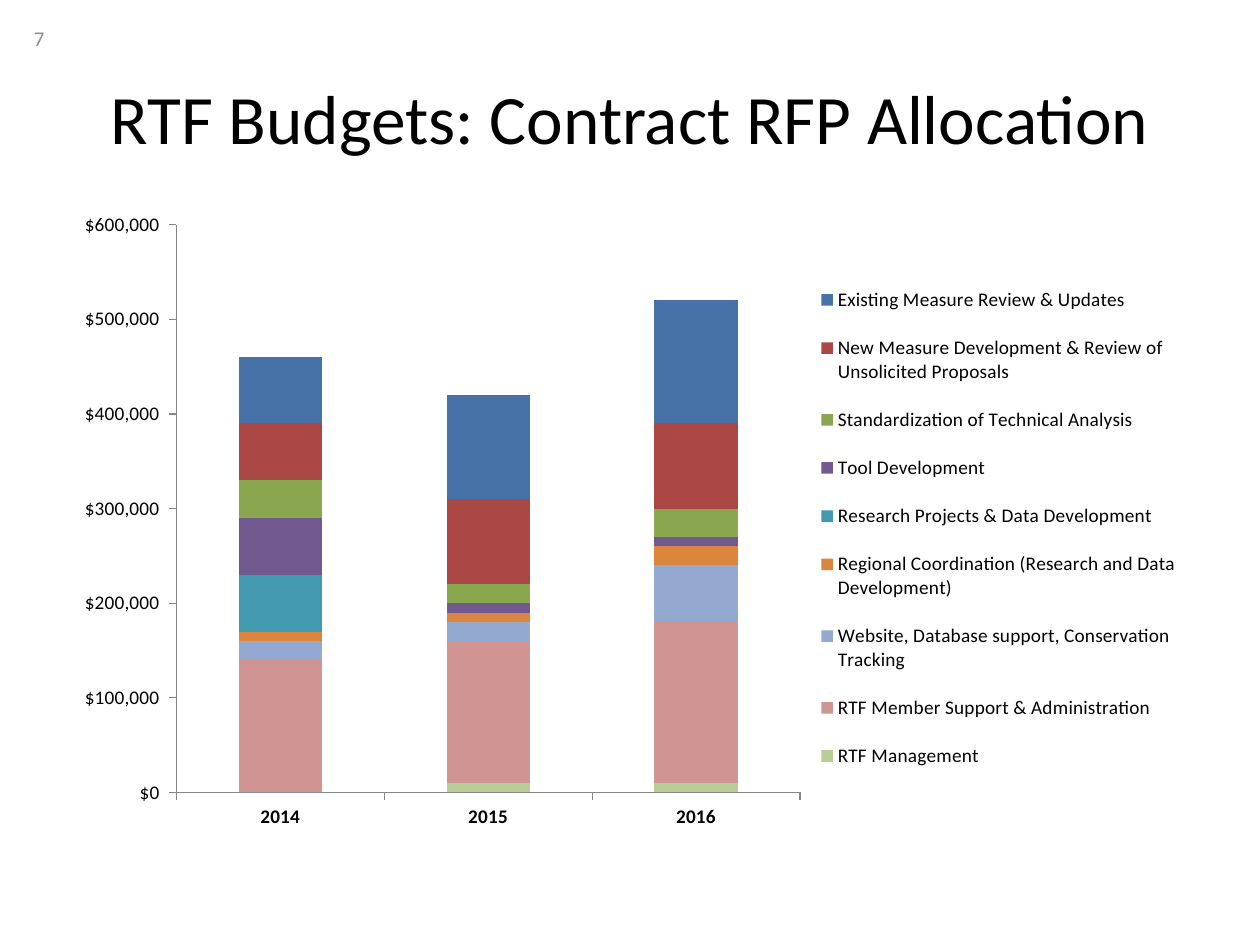
from lxml.etree import SubElement
from pptx import Presentation
from pptx.chart.data import CategoryChartData
from pptx.dml.color import RGBColor
from pptx.enum.chart import XL_CHART_TYPE, XL_LEGEND_POSITION, XL_TICK_MARK
from pptx.enum.text import MSO_ANCHOR, PP_ALIGN
from pptx.oxml.ns import qn
from pptx.util import Inches, Pt

FONT = "Calibri"
YEARS = ["2014", "2015", "2016"]
BUDGETS = [
    ("RTF Management", (0, 10000, 10000), "B9CD97"),
    ("RTF Member Support & Administration", (140000, 150000, 170000), "D09493"),
    ("Website, Database support, Conservation Tracking", (20000, 20000, 60000), "93A9D0"),
    ("Regional Coordination (Research and Data Development)", (10000, 10000, 20000), "DC853E"),
    ("Research Projects & Data Development", (60000, 0, 0), "4299B0"),
    ("Tool Development", (60000, 10000, 10000), "725990"),
    ("Standardization of Technical Analysis", (40000, 20000, 30000), "8AA64F"),
    ("New Measure Development & Review of Unsolicited Proposals", (60000, 90000, 90000), "AB4744"),
    ("Existing Measure Review & Updates", (70000, 110000, 130000), "4672A8"),
]


def color(hex_string):
    """Turn a hex string into a colour."""
    return RGBColor.from_string(hex_string)


def style_font(font, size, hex_string="000000", bold=False):
    """Give a font its face, size, colour and weight."""
    font.name = FONT
    font.size = Pt(size)
    font.bold = bold
    font.color.rgb = color(hex_string)


def add_text(slide, text, box, size, hex_string, alignment):
    """Add one line of text, centred vertically in its box."""
    shape = slide.shapes.add_textbox(*[Inches(length) for length in box])
    frame = shape.text_frame
    frame.word_wrap = True
    frame.vertical_anchor = MSO_ANCHOR.MIDDLE
    paragraph = frame.paragraphs[0]
    paragraph.alignment = alignment
    run = paragraph.add_run()
    run.text = text
    style_font(run.font, size, hex_string)


def place(element, box, inner=False):
    """Set the manual layout of a chart part as fractions of the chart."""
    layout = element.find(qn("c:layout"))
    if layout is None:
        layout = element.makeelement(qn("c:layout"))
        if inner:
            element.insert(0, layout)
        else:
            element.find(qn("c:legendPos")).addnext(layout)
    manual = SubElement(layout, qn("c:manualLayout"))
    settings = [("layoutTarget", "inner")] if inner else []
    settings += [("xMode", "edge"), ("yMode", "edge"), *zip("xywh", box)]
    for name, value in settings:
        SubElement(manual, qn(f"c:{name}")).set("val", str(value))


def style_axis(axis, bold=False):
    """Give an axis its grey line, outer ticks and label font."""
    axis.has_major_gridlines = False
    axis.major_tick_mark = XL_TICK_MARK.OUTSIDE
    axis.minor_tick_mark = XL_TICK_MARK.NONE
    axis.format.line.color.rgb = color("868686")
    axis.format.line.width = Pt(0.75)
    style_font(axis.tick_labels.font, 11, bold=bold)


def add_budget_chart(slide, box):
    """Add the stacked column chart of budgets by year."""
    data = CategoryChartData()
    data.categories = YEARS
    for name, values, _ in BUDGETS:
        data.add_series(name, values)
    lengths = [Inches(length) for length in box]
    chart = slide.shapes.add_chart(XL_CHART_TYPE.COLUMN_STACKED, *lengths, data).chart
    chart.has_title = False
    style_font(chart.font, 10)

    plot = chart.plots[0]
    plot.gap_width = 150
    plot.overlap = 100
    plot.vary_by_categories = False
    for series, (_, _, hex_string) in zip(plot.series, BUDGETS):
        series.format.fill.solid()
        series.format.fill.fore_color.rgb = color(hex_string)

    style_axis(chart.category_axis, bold=True)
    value_axis = chart.value_axis
    style_axis(value_axis)
    value_axis.minimum_scale = 0
    value_axis.maximum_scale = 600000
    value_axis.major_unit = 100000
    value_axis.tick_labels.number_format = '"$"#,##0_);\\("$"#,##0\\)'
    value_axis.tick_labels.number_format_is_linked = False

    chart.has_legend = True
    legend = chart.legend
    legend.position = XL_LEGEND_POSITION.RIGHT
    legend.include_in_layout = False
    style_font(legend.font, 11)
    place(plot._element.getparent(), (0.1, 0.04, 0.55, 0.88), inner=True)
    place(legend._element, (0.66, 0.1, 0.33, 0.82))


def main():
    """Build the slide and save it."""
    presentation = Presentation()
    presentation.slide_width = Inches(10)
    presentation.slide_height = Inches(7.5)
    slide = presentation.slides.add_slide(presentation.slide_layouts[6])
    title = "RTF Budgets: Contract RFP Allocation"
    add_text(slide, title, (0.5, 0.3, 9, 1.25), 39.6, "000000", PP_ALIGN.CENTER)
    add_text(slide, "7", (0.17, 0.1, 2.33, 0.4), 12, "8C8C8C", PP_ALIGN.LEFT)
    add_budget_chart(slide, (0.5, 1.58, 9, 5.12))
    presentation.save("out.pptx")


if __name__ == "__main__":
    main()
